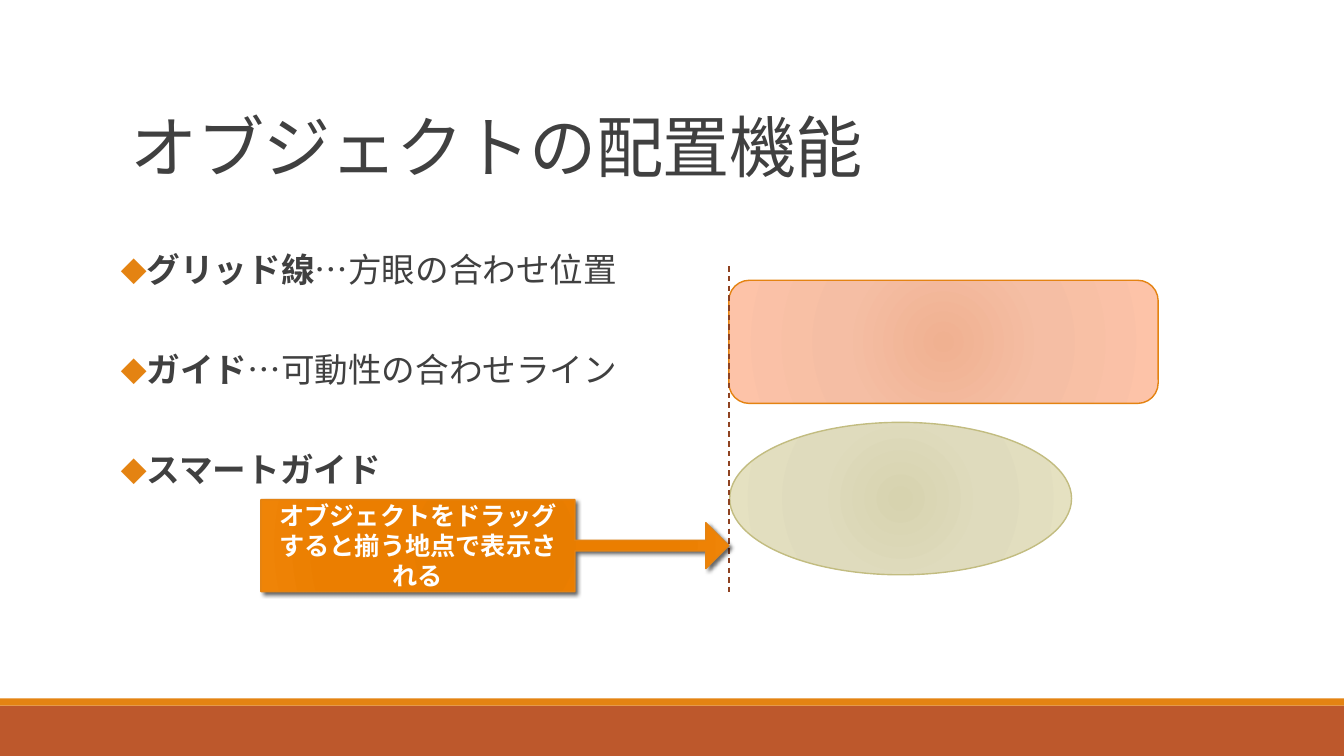
"""Build a slide on object alignment features: gridlines, guides and smart guides."""
from dataclasses import dataclass

from lxml import etree
from pptx import Presentation
from pptx.dml.color import RGBColor
from pptx.enum.dml import MSO_LINE
from pptx.enum.shapes import MSO_CONNECTOR, MSO_SHAPE
from pptx.enum.text import MSO_ANCHOR, PP_ALIGN
from pptx.oxml.ns import qn
from pptx.util import Pt

RECT = MSO_SHAPE.RECTANGLE
ROUNDED = MSO_SHAPE.ROUNDED_RECTANGLE
OVAL = MSO_SHAPE.OVAL
CALLOUT = MSO_SHAPE.RIGHT_ARROW_CALLOUT
STRAIGHT = MSO_CONNECTOR.STRAIGHT
DASH = MSO_LINE.DASH
BOTTOM, TOP, MIDDLE = MSO_ANCHOR.BOTTOM, MSO_ANCHOR.TOP, MSO_ANCHOR.MIDDLE
CENTER = PP_ALIGN.CENTER

COLORS = {
    "text": "404040", "white": "FFFFFF", "orange": "E48312", "rust": "BD582C",
    "olive": "C2BC80", "guide": "8E4221", "shadow": "000000",
}
LATIN, JAPANESE = "Calibri", "Noto Sans CJK JP"
SLIDE_WIDTH, SLIDE_HEIGHT = 960, 540
GUIDE_X, GUIDE_TOP, GUIDE_BOTTOM = 520.6, 190.1, 422.6


@dataclass(frozen=True)
class Box:
    left: float
    top: float
    width: float
    height: float

    def lengths(self) -> tuple:
        return Pt(self.left), Pt(self.top), Pt(self.width), Pt(self.height)


@dataclass(frozen=True)
class Band:
    box: Box
    color: str


@dataclass(frozen=True)
class Sample:
    kind: int
    box: Box
    gradient: tuple
    outline: str


@dataclass(frozen=True)
class Feature:
    term: str
    meaning: str = ""


BANDS = (
    Band(Box(0, 504, SLIDE_WIDTH, 36), "rust"),
    Band(Box(0, 498.9, SLIDE_WIDTH, 5.1), "orange"),
)
SAMPLES = (
    Sample(ROUNDED, Box(GUIDE_X, 200.2, 306.7, 88),
           ((0, "F0B191"), (45, "F5BEA4"), (100, "FDC3A8")), "orange"),
    Sample(OVAL, Box(521.2, 301.7, 244.2, 108.9),
           ((0, "D7D3AF"), (45, "DFDBBD"), (100, "E5E1C1")), "olive"),
)
EXPLANATION = Sample(
    CALLOUT, Box(186.4, 356.9, 334.2, 65.7),
    ((0, "E57B00"), (34, "E87D00"), (70, "EB7E00"), (100, "EF8407")), "orange")
CALLOUT_ADJUSTMENTS = (0.114, 0.25, 0.25, 0.671)
FEATURES = (
    Feature("グリッド線", "…方眼の合わせ位置"),
    Feature("ガイド", "…可動性の合わせライン"),
    Feature("スマートガイド"),
)


def rgb(name: str) -> RGBColor:
    return RGBColor.from_string(COLORS[name])


def add_node(parent, tag: str, **attributes):
    return etree.SubElement(parent, qn(tag), attributes)


def add_run(paragraph, text: str, size: float, color: str = "text",
            bold: bool = False, font: str = LATIN):
    run = paragraph.add_run()
    run.text = text
    run.font.size = Pt(size)
    run.font.bold = bold
    run.font.name = font
    run.font.color.rgb = rgb(color)
    return run


def add_text_frame(slide, box: Box, anchor: int, side_inset: float):
    frame = slide.shapes.add_textbox(*box.lengths()).text_frame
    frame.word_wrap = True
    frame.vertical_anchor = anchor
    frame.margin_left = frame.margin_right = Pt(side_inset)
    return frame


def add_band(slide, band: Band) -> None:
    bar = slide.shapes.add_shape(RECT, *band.box.lengths())
    bar.shadow.inherit = False
    bar.fill.solid()
    bar.fill.fore_color.rgb = rgb(band.color)
    bar.line.fill.background()


def add_sample(slide, sample: Sample):
    shape = slide.shapes.add_shape(sample.kind, *sample.box.lengths())
    shape.shadow.inherit = False
    shape.line.color.rgb = rgb(sample.outline)
    shape.line.width = Pt(1)
    gradient = etree.Element(qn("a:gradFill"), rotWithShape="1")
    stops = add_node(gradient, "a:gsLst")
    for position, color in sample.gradient:
        stop = add_node(stops, "a:gs", pos=str(position * 1000))
        add_node(stop, "a:srgbClr", val=color)
    radial = add_node(gradient, "a:path", path="circle")
    add_node(radial, "a:fillToRect", **dict.fromkeys("ltrb", "100000"))
    shape._element.spPr.find(qn("a:prstGeom")).addnext(gradient)
    return shape


def add_title(slide, text: str) -> None:
    frame = add_text_frame(slide, Box(86.4, 22.3, 792, 114.5), BOTTOM, 7.2)
    heading = frame.paragraphs[0]
    heading.line_spacing = 0.85
    run = add_run(heading, text, 48)
    run.font._element.set("spc", "-50")


def add_features(slide, features: tuple) -> None:
    frame = add_text_frame(slide, Box(86.4, 145.4, 388.8, 316.8), TOP, 0)
    for index, feature in enumerate(features):
        item = frame.add_paragraph() if index else frame.paragraphs[0]
        item.line_spacing = 2.0
        item.space_before, item.space_after = Pt(12), Pt(2)
        properties = item._p.get_or_add_pPr()
        properties.set("marL", str(Pt(7.2)))
        properties.set("indent", str(-Pt(7.2)))
        bullet_color = add_node(properties, "a:buClr")
        add_node(bullet_color, "a:srgbClr", val=COLORS["orange"])
        add_node(properties, "a:buFont", typeface=LATIN)
        add_node(properties, "a:buChar", char="◆")
        add_run(item, feature.term, 24, bold=True)
        if feature.meaning:
            add_run(item, feature.meaning, 24)


def add_guide(slide) -> None:
    guide = slide.shapes.add_connector(
        STRAIGHT, Pt(GUIDE_X), Pt(GUIDE_TOP), Pt(GUIDE_X), Pt(GUIDE_BOTTOM))
    guide.line.color.rgb = rgb("guide")
    guide.line.width = Pt(1)
    guide.line.dash_style = DASH
    add_node(guide._element.spPr, "a:effectLst")


def add_explanation(slide, text: str) -> None:
    callout = add_sample(slide, EXPLANATION)
    for index, value in enumerate(CALLOUT_ADJUSTMENTS):
        callout.adjustments[index] = value
    effects = callout._element.spPr.find(qn("a:effectLst"))
    shadow = add_node(effects, "a:outerShdw", blurRad=str(Pt(3)), dist=str(Pt(2)),
                      dir="2700000", algn="tl", rotWithShape="0")
    shadow_color = add_node(shadow, "a:srgbClr", val=COLORS["shadow"])
    add_node(shadow_color, "a:alpha", val="60000")
    frame = callout.text_frame
    frame.word_wrap = True
    frame.vertical_anchor = MIDDLE
    paragraph = frame.paragraphs[0]
    paragraph.alignment = CENTER
    run = add_run(paragraph, text, 18, "white", True, JAPANESE)
    add_node(run.font._element, "a:ea", typeface=JAPANESE)


def main() -> None:
    deck = Presentation()
    deck.slide_width, deck.slide_height = Pt(SLIDE_WIDTH), Pt(SLIDE_HEIGHT)
    slide = deck.slides.add_slide(deck.slide_layouts[6])
    for band in BANDS:
        add_band(slide, band)
    add_title(slide, "オブジェクトの配置機能")
    add_features(slide, FEATURES)
    for sample in SAMPLES:
        add_sample(slide, sample)
    add_guide(slide)
    add_explanation(slide, "オブジェクトをドラッグすると揃う地点で表示される")
    deck.save("out.pptx")


if __name__ == "__main__":
    main()
